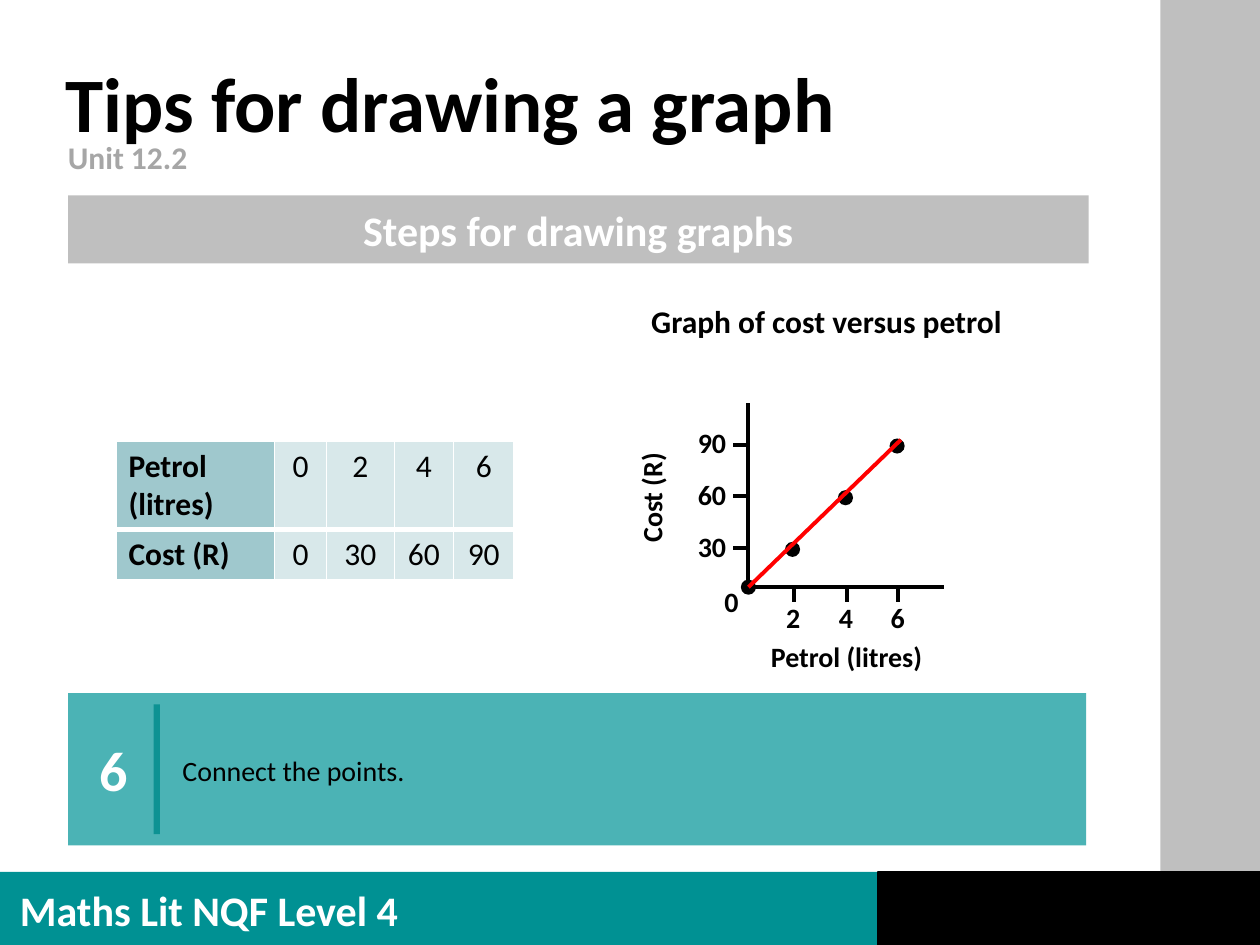
from lxml import etree
from pptx import Presentation, util as u
from pptx.dml.color import RGBColor
from pptx.enum import shapes, text
from pptx.oxml.ns import qn

# The slide is a grid of 100 columns by 75 rows, each 0.1 inch.
COLUMNS, ROWS, CELL = 100, 75, 0.1
BLACK, WHITE, GREY, RED = "000000", "FFFFFF", "BFBFBF", "FF0000"
TEAL, LIGHT_TEAL, DARK_TEAL = "009193", "4BB3B5", "0D9293"
HEADER_FILL, VALUE_FILL = "9FC8CD", "D8E8EA"

ORIGIN_X, ORIGIN_Y = 59.4, 46.6
TICK, DOT = 1.2, 1.2
X_TICKS = [(63 + 4.15 * step, label) for step, label in enumerate(["2", "4", "6"])]
Y_TICKS = [(43.5 - 4.1 * step, label) for step, label in enumerate(["30", "60", "90"])]


def grid(*cells):
    return [u.Inches(round(cell * CELL, 2)) for cell in cells]


def color(hex_string):
    return RGBColor.from_string(hex_string)


def style_text(frame, words, size, hex_color, bold=True, align=None):
    frame.text = words
    paragraph = frame.paragraphs[0]
    paragraph.alignment = align
    font = paragraph.runs[0].font
    font.name, font.size, font.bold = "Calibri", u.Pt(size), bold
    font.color.rgb = color(hex_color)
    return paragraph


def add_block(slide, box, fill, kind=shapes.MSO_SHAPE.RECTANGLE):
    shape = slide.shapes.add_shape(kind, *grid(*box))
    shape.shadow.inherit = False
    shape.fill.solid()
    shape.fill.fore_color.rgb = color(fill)
    shape.line.fill.background()
    return shape


def add_label(slide, box, words, size=16, hex_color=BLACK, bold=True,
              align=None, wrap=False):
    label = slide.shapes.add_textbox(*grid(*box))
    label.text_frame.word_wrap = wrap
    style_text(label.text_frame, words, size, hex_color, bold, align)
    return label


def add_line(slide, start, end, hex_color=BLACK):
    line = slide.shapes.add_connector(
        shapes.MSO_CONNECTOR.STRAIGHT, *grid(*start, *end))
    line.line.color.rgb = color(hex_color)
    line.line.width = u.Pt(2.25)
    etree.SubElement(line._element.spPr, qn("a:effectLst"))


def set_borders(cell, bottom_width):
    """Draw white borders; they must come before the fill of the cell."""
    properties = cell._tc.get_or_add_tcPr()
    for side, width in (("L", 1), ("R", 1), ("T", 1), ("B", bottom_width)):
        border = etree.SubElement(properties, qn(f"a:ln{side}"), w=str(u.Pt(width)))
        fill = etree.SubElement(border, qn("a:solidFill"))
        etree.SubElement(fill, qn("a:srgbClr"), val=WHITE)


def add_cost_table(slide):
    rows = [["Petrol (litres)", "0", "2", "4", "6"],
            ["Cost (R)", "0", "30", "60", "90"]]
    widths = [12.6, 4.1, 5.4, 4.7, 4.8]
    frame = slide.shapes.add_table(
        len(rows), len(widths), *grid(9.2, 35, sum(widths), 7.2))
    table = frame.table
    for column, width in zip(table.columns, grid(*widths)):
        column.width = width
    for row_index, row in enumerate(rows):
        for column_index, words in enumerate(row):
            header = column_index == 0
            cell = table.cell(row_index, column_index)
            set_borders(cell, 3 if row_index == 0 else 1)
            cell.fill.solid()
            cell.fill.fore_color.rgb = color(HEADER_FILL if header else VALUE_FILL)
            style_text(cell.text_frame, words, 18, BLACK, header,
                       None if header else text.PP_ALIGN.CENTER)


def add_graph(slide):
    add_label(slide, (50.7, 23.5, 30.1, 4), "Graph of cost versus petrol", 18)
    add_label(slide, (60.2, 50.3, 14.7, 3.7), "Petrol (litres)")
    add_label(slide, (47.1, 37.6, 9.2, 3.7), "Cost (R)").rotation = 270
    add_label(slide, (56.5, 45.9, 3.2, 3.7), "0")

    add_line(slide, (ORIGIN_X, 32), (ORIGIN_X, ORIGIN_Y))
    add_line(slide, (ORIGIN_X - 0.2, ORIGIN_Y), (74.9, ORIGIN_Y))
    for x, words in X_TICKS:
        add_line(slide, (x, ORIGIN_Y), (x, ORIGIN_Y + TICK))
        add_label(slide, (x - 1.6, 47.2, 3.2, 3.7), words)
    for y, words in Y_TICKS:
        add_line(slide, (ORIGIN_X - TICK, y), (ORIGIN_X, y))
        add_label(slide, (54.4, y - 2, 4.3, 3.7), words)

    points = [(ORIGIN_X, ORIGIN_Y)]
    points += [(x - 0.1, y + 0.1) for (x, _), (y, _) in zip(X_TICKS, Y_TICKS)]
    for x, y in points:
        add_block(slide, (x - DOT / 2, y - DOT / 2, DOT, DOT), BLACK,
                  shapes.MSO_SHAPE.OVAL)
    add_line(slide, (ORIGIN_X, ORIGIN_Y), (71.5, 34.9), RED)


def add_frame(slide):
    """Add the side band and the footer."""
    add_block(slide, (92.1, 0, 7.9, ROWS), GREY)
    add_block(slide, (0, 69.2, COLUMNS, 5.8), TEAL)
    corner = add_block(slide, (69.7, 69.2, 30.3, 5.8), BLACK)
    corner.line.color.rgb = color(BLACK)
    corner.line.width = u.Pt(1)
    add_label(slide, (0.6, 69.7, 37.5, 5), "Maths Lit NQF Level 4", 24, WHITE, wrap=True)


def add_headings(slide):
    title = add_label(slide, (4.2, 4.6, 86.5, 7.9), "Tips for drawing a graph", 44, wrap=True)
    title.text_frame.vertical_anchor = text.MSO_ANCHOR.MIDDLE
    unit = add_label(slide, (4.4, 10.8, 86.5, 3.3), "Unit 12.2", 18, "A6A6A6", wrap=True)
    for heading in (title, unit):
        heading.text_frame.paragraphs[0].line_spacing = 0.9
    banner = add_block(slide, (5.4, 15.5, 81, 5.4), GREY)
    banner.text_frame.vertical_anchor = text.MSO_ANCHOR.MIDDLE
    style_text(banner.text_frame, "Steps for drawing graphs", 24, WHITE,
               align=text.PP_ALIGN.CENTER)


def add_step(slide, number, words):
    add_block(slide, (5.4, 55, 80.8, 12.1), LIGHT_TEAL)
    add_label(slide, (5.7, 57.9, 6.7, 6.4), number, 32, WHITE,
              align=text.PP_ALIGN.CENTER, wrap=True)
    add_label(slide, (13.5, 59.3, 70.3, 3.7), words, bold=False, wrap=True)
    add_block(slide, (12.2, 55.9, 0.5, 10.3), DARK_TEAL)


def main():
    presentation = Presentation()
    presentation.slide_width, presentation.slide_height = grid(COLUMNS, ROWS)
    slide = presentation.slides.add_slide(presentation.slide_layouts[6])
    add_frame(slide)
    add_headings(slide)
    add_step(slide, "6", "Connect the points.")
    add_cost_table(slide)
    add_graph(slide)
    presentation.save("out.pptx")


if __name__ == "__main__":
    main()
